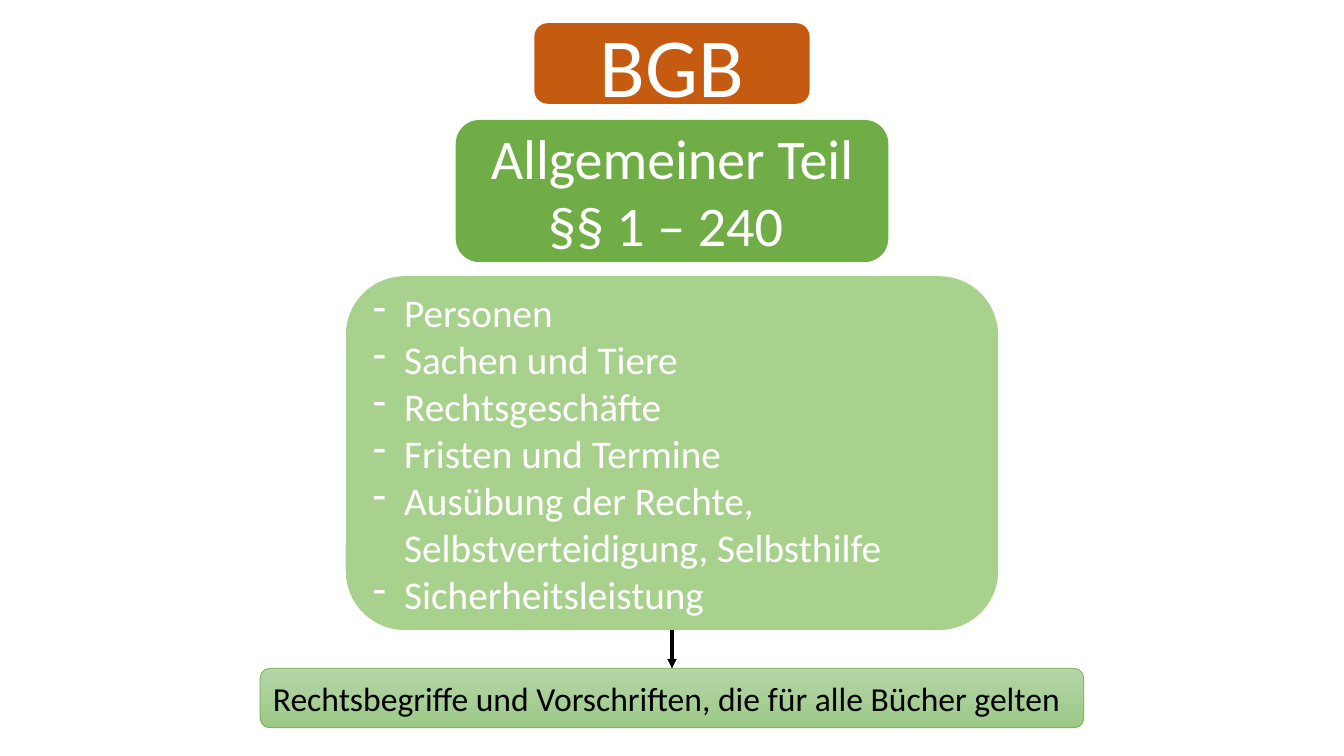
"""Build the slide on the general part of the BGB."""
from lxml import etree
from pptx import Presentation
from pptx.dml.color import RGBColor
from pptx.enum.shapes import MSO_CONNECTOR as CONN, MSO_SHAPE as SHAPE
from pptx.enum.text import MSO_ANCHOR as ANCHOR, PP_ALIGN as ALIGN
from pptx.oxml.ns import qn
from pptx.util import Inches, Pt

ORANGE = RGBColor(0xC5, 0x5A, 0x11)
GREEN = RGBColor(0x70, 0xAD, 0x47)
LIGHT_GREEN = RGBColor(0xA9, 0xD1, 0x8E)
GRADIENT_TOP = RGBColor(0xB5, 0xD5, 0xA7)
GRADIENT_BOTTOM = RGBColor(0x9C, 0xC9, 0x87)
WHITE = RGBColor(0xFF, 0xFF, 0xFF)
BLACK = RGBColor(0, 0, 0)

prs = Presentation()
prs.slide_width, prs.slide_height = Inches(13.33), Inches(7.5)
s = prs.slides.add_slide(prs.slide_layouts[6])


def add_box(top, width, height, text, size, color, align):
    """Add a horizontally centred rounded box with text."""
    left = (prs.slide_width - Inches(width)) // 2
    sp = s.shapes.add_shape(SHAPE.ROUNDED_RECTANGLE, left, Inches(top), Inches(width), Inches(height))
    sp.shadow.inherit = False
    sp.line.fill.background()
    tf = sp.text_frame
    tf.word_wrap = True
    tf.vertical_anchor = ANCHOR.MIDDLE
    tf.text = text
    for p in tf.paragraphs:
        p.alignment = align
        for r in p.runs:
            r.font.name, r.font.size = "Calibri", Pt(size)
            r.font.color.rgb = color
    return sp


code = add_box(0.23, 2.73, 0.8, "BGB", 60, WHITE, ALIGN.CENTER)
part = add_box(1.19, 4.29, 1.41, "Allgemeiner Teil\n§§ 1 – 240 ", 40, WHITE, ALIGN.CENTER)
topics = add_box(2.74, 6.47, 3.51, "\n".join([
    "Personen",
    "Sachen und Tiere",
    "Rechtsgeschäfte",
    "Fristen und Termine",
    "Ausübung der Rechte, Selbstverteidigung, Selbsthilfe",
    "Sicherheitsleistung",
]), 28, WHITE, ALIGN.LEFT)
scope = add_box(6.63, 8.17, 0.59, "Rechtsbegriffe und Vorschriften, die für alle Bücher gelten",
                24, BLACK, ALIGN.LEFT)

for sp, color in ((code, ORANGE), (part, GREEN), (topics, LIGHT_GREEN)):
    sp.fill.solid()
    sp.fill.fore_color.rgb = color

for p in topics.text_frame.paragraphs:
    pPr = p._p.get_or_add_pPr()
    pPr.set("marL", str(Inches(0.31)))
    pPr.set("indent", str(-Inches(0.31)))
    etree.SubElement(pPr, qn("a:buFontTx"))
    etree.SubElement(pPr, qn("a:buChar")).set("char", "-")

scope.fill.gradient()
scope.fill.gradient_angle = 270
for stop, color in zip(scope.fill.gradient_stops, (GRADIENT_TOP, GRADIENT_BOTTOM)):
    stop.color.rgb = color
scope.line.color.rgb = GREEN
scope.line.width = Pt(0.5)

arrow = s.shapes.add_connector(CONN.STRAIGHT, 0, 0, 0, 0)
arrow.begin_connect(topics, 2)
arrow.end_connect(scope, 0)
arrow.line.color.rgb = BLACK
arrow.line.width = Pt(2.25)
etree.SubElement(arrow.line._get_or_add_ln(), qn("a:tailEnd")).set("type", "triangle")
etree.SubElement(arrow._element.spPr, qn("a:effectLst"))

prs.save("out.pptx")
